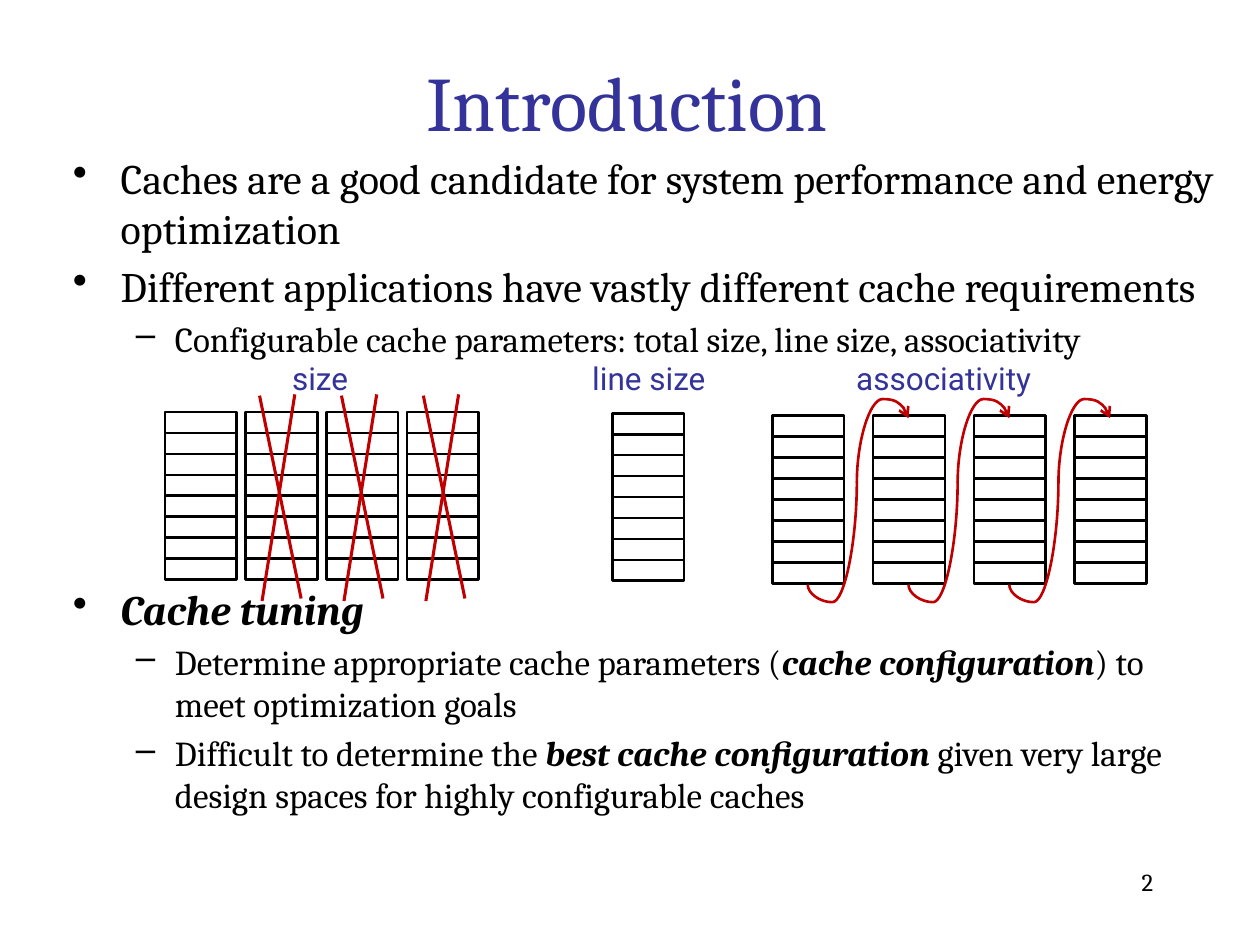
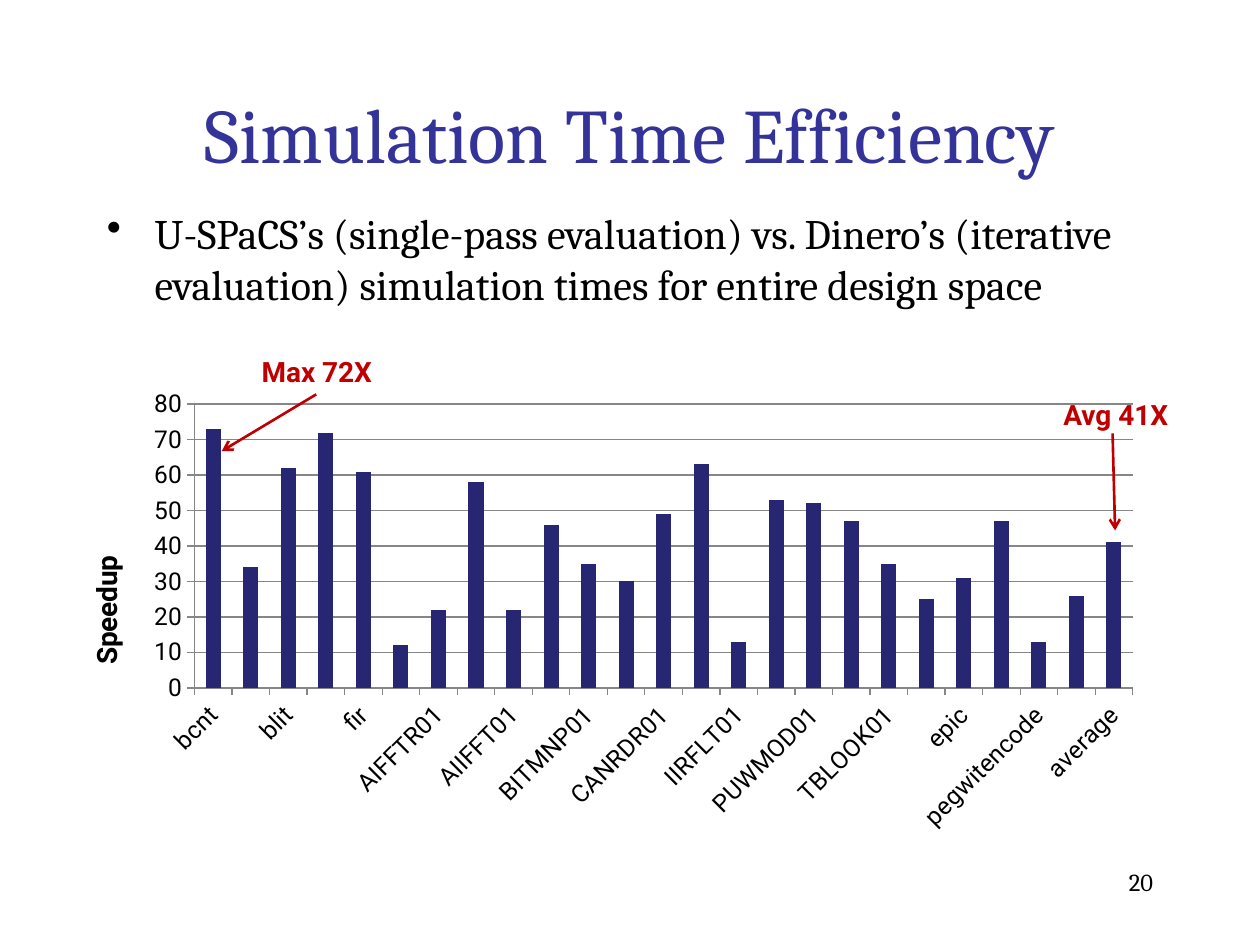
import pptx
import pptx.chart.data
import pptx.dml.color
import pptx.enum.chart
import pptx.enum.shapes
import pptx.enum.text
import pptx.oxml
import pptx.oxml.ns
import pptx.util

Inches, Pt = pptx.util.Inches, pptx.util.Pt
qn = pptx.oxml.ns.qn
ALIGN = pptx.enum.text.PP_ALIGN
ANCHOR = pptx.enum.text.MSO_ANCHOR
CONNECTOR = pptx.enum.shapes.MSO_CONNECTOR

SERIF, SANS = "Cambria", "Roboto"
INK, NAVY, RED, BAR, GRID = "000000", "333399", "C00000", "262673", "868686"

LEVELS = [
    {"bullet": "•", "left": 0.38, "hang": 0.38, "size": 24},
    {"bullet": "–", "left": 0.81, "hang": 0.31, "size": 20},
]

INTRO = {
    "title": "Introduction", "title_at": (0.73, 0.17, 8.5, 1.25), "number": "2",
    "bodies": [
        ((0.48, 1.16, 9.31, 1.8), [
            (0, [("Caches are a good candidate for system performance and energy optimization", False)]),
            (0, [("Different applications have vastly different cache requirements", False)]),
            (1, [("Configurable cache parameters: total size, line size, associativity", False)]),
        ]),
        ((0.48, 4.58, 9.31, 2.0), [
            (0, [("Cache tuning", True)]),
            (1, [("Determine appropriate cache parameters (", False),
                 ("cache configuration", True),
                 (") to meet optimization goals", False)]),
            (1, [("Difficult to determine the ", False),
                 ("best cache configuration ", True),
                 ("given very large design spaces for highly configurable caches", False)]),
        ]),
    ],
}
CACHE_SETS = [
    {"label": "size", "label_left": 1.42, "left": 1.31, "top": 3.27, "step": 0.64, "count": 4},
    {"label": "line size", "label_left": 4.03, "left": 4.86, "top": 3.28, "step": 0, "count": 1},
    {"label": "associativity", "label_left": 6.37, "left": 6.13, "top": 3.3, "step": 0.8, "count": 4},
]
CACHE_WIDTH, CACHE_HEIGHT, CACHE_LINES = 0.57, 1.33, 8
CROSS_LEFT, CROSS_TOP, CROSS_STEP = 2.06, 3.13, 0.65

EFFICIENCY = {
    "title": "Simulation Time Efficiency", "title_at": (0.75, 0.43, 8.5, 1.25), "number": "20",
    "bodies": [
        ((0.75, 1.6, 8.5, 0.94), [
            (0, [("U-SPaCS’s (single-pass evaluation) vs. Dinero’s (iterative evaluation) "
                  "simulation times for entire design space", False)]),
        ]),
    ],
}
SPEEDUPS = {
    "bcnt": 73, "bilv": 34, "blit": 62, "brev": 72, "fir": 61, "A2TIME01": 12,
    "AIFFTR01": 22, "AIFIRF01": 58, "AIIFFT01": 22, "BaseFP01": 46, "BITMNP01": 35,
    "CACHEB01": 30, "CANRDR01": 49, "IDCTRN01": 63, "IIRFLT01": 13, "PNTRCH01": 53,
    "PUWMOD01": 52, "RSPEED01": 47, "TBLOOK01": 35, "TTSPRK01": 25, "epic": 31,
    "mpeg2decode": 47, "pegwitencode": 13, "jpegencode": 26, "average": 41,
}
PLOT_AREA = {"x": 0.121, "y": 0.095, "w": 0.855, "h": 0.566}
CALLOUTS = [
    ("Max 72X", (1.8, 2.76, 1.43, 0.37), (2.51, 3.13), (1.76, 3.58)),
    ("Avg 41X", (8.2, 3.1, 1.31, 0.37), (8.83, 3.44), (8.85, 4.21)),
]


def color(hex_code):
    return pptx.dml.color.RGBColor.from_string(hex_code)


def xml(tag, **attributes):
    element = pptx.oxml.parse_xml(f'<{tag} {pptx.oxml.ns.nsdecls(tag.split(":")[0])}/>')
    for name, value in attributes.items():
        element.set(name, str(value))
    return element


def style(font, size, ink, face, bold=False, italic=False):
    font.size, font.name, font.bold, font.italic = Pt(size), face, bold, italic
    font.color.rgb = color(ink)


def text_box(slide, at, anchor=ANCHOR.TOP):
    frame = slide.shapes.add_textbox(*map(Inches, at)).text_frame
    frame.word_wrap = True
    frame.vertical_anchor = anchor
    return frame


def add_text(slide, at, text, size, ink, face, align=ALIGN.CENTER, anchor=ANCHOR.TOP, bold=False):
    frame = text_box(slide, at, anchor)
    frame.text = text
    paragraph = frame.paragraphs[0]
    paragraph.alignment = align
    style(paragraph.runs[0].font, size, ink, face, bold)


def add_body(slide, at, items):
    frame = text_box(slide, at)
    for index, (depth, pieces) in enumerate(items):
        level = LEVELS[depth]
        paragraph = frame.paragraphs[0] if index == 0 else frame.add_paragraph()
        properties = paragraph._p.get_or_add_pPr()
        properties.set("marL", str(Inches(level["left"])))
        properties.set("indent", str(-Inches(level["hang"])))
        properties.append(xml("a:buChar", char=level["bullet"]))
        if index:
            paragraph.space_before = Pt(4)
        for text, emphasis in pieces:
            run = paragraph.add_run()
            run.text = text
            style(run.font, level["size"], INK, SERIF, emphasis, emphasis)


def add_line(slide, start, end, ink, width, arrow=False, kind=CONNECTOR.STRAIGHT):
    line = slide.shapes.add_connector(kind, *map(Inches, (*start, *end)))
    line.line.color.rgb = color(ink)
    line.line.width = Pt(width)
    properties = line.element.spPr
    if arrow:
        properties.find(qn("a:ln")).append(xml("a:tailEnd", type="arrow"))
    properties.append(xml("a:effectLst"))
    return line


def add_curve(slide, start, end, bend, arrow=False):
    middle_x, middle_y = (start[0] + end[0]) / 2, (start[1] + end[1]) / 2
    half_width, half_height = (start[1] - end[1]) / 2, (end[0] - start[0]) / 2
    curve = add_line(slide, (middle_x + half_width, middle_y + half_height),
                     (middle_x - half_width, middle_y - half_height),
                     RED, 1.5, arrow, CONNECTOR.CURVE)
    properties = curve.element.spPr
    properties.find(qn("a:xfrm")).set("rot", "5400000")
    geometry = properties.find(qn("a:prstGeom"))
    geometry.set("prst", "curvedConnector3")
    geometry.find(qn("a:avLst")).append(
        xml("a:gd", name="adj1", fmla=f"val {round(bend * 100000)}"))


def add_cache(slide, left, top):
    cache = slide.shapes.add_shape(pptx.enum.shapes.MSO_SHAPE.RECTANGLE,
                                   *map(Inches, (left, top, CACHE_WIDTH, CACHE_HEIGHT)))
    cache.shadow.inherit = False
    cache.fill.background()
    cache.line.color.rgb = color(INK)
    cache.line.width = Pt(1.5)
    for row in range(1, CACHE_LINES):
        y = top + row * CACHE_HEIGHT / CACHE_LINES
        add_line(slide, (left, y), (left + CACHE_WIDTH, y), INK, 1.5)


def add_slide(deck, content):
    slide = deck.slides.add_slide(deck.slide_layouts[6])
    for at, items in content["bodies"]:
        add_body(slide, at, items)
    add_text(slide, content["title_at"], content["title"], 44, NAVY, SERIF, anchor=ANCHOR.MIDDLE)
    add_text(slide, (7.17, 6.83, 2.08, 0.5), content["number"], 14, INK, SERIF, ALIGN.RIGHT)
    return slide


def add_cache_diagram(slide):
    for group in CACHE_SETS:
        add_text(slide, (group["label_left"], 2.8, 2.24, 0.71), group["label"], 18, NAVY, SANS)
        for index in range(group["count"]):
            add_cache(slide, group["left"] + index * group["step"], group["top"])
    for index in range(3):
        x = CROSS_LEFT + index * CROSS_STEP
        add_line(slide, (x + 0.28, CROSS_TOP), (x + 0.02, CROSS_TOP + 1.64), RED, 1.75)
        add_line(slide, (x, CROSS_TOP + 0.01), (x + 0.33, CROSS_TOP + 1.62), RED, 1.75)
    ways = CACHE_SETS[-1]
    for index in range(ways["count"] - 1):
        x = ways["left"] + index * ways["step"]
        add_curve(slide, (x + 0.67, 3.83), (x + 1.08, 3.32), 1.3, arrow=True)
        add_curve(slide, (x + 0.28, 4.64), (x + 0.67, 3.82), -0.17)


def add_speedup_chart(slide):
    data = pptx.chart.data.CategoryChartData()
    data.categories = list(SPEEDUPS)
    data.add_series("Series 1", list(SPEEDUPS.values()))
    chart = slide.shapes.add_chart(pptx.enum.chart.XL_CHART_TYPE.COLUMN_CLUSTERED,
                                   *map(Inches, (0.49, 2.83, 8.71, 3.98)), data).chart
    chart.has_legend = chart.has_title = False
    style(chart.font, 18, INK, SERIF)

    bars = chart.plots[0]
    bars.gap_width = 150
    bars.vary_by_categories = False
    fill = bars.series[0].format.fill
    fill.solid()
    fill.fore_color.rgb = color(BAR)

    benchmarks, speedup = chart.category_axis, chart.value_axis
    for axis in (benchmarks, speedup):
        style(axis.tick_labels.font, 14, INK, SANS)
        axis.major_tick_mark = pptx.enum.chart.XL_TICK_MARK.OUTSIDE
        axis.format.line.color.rgb = color(GRID)
    benchmarks._element.find(qn("c:txPr")).find(qn("a:bodyPr")).set("rot", "-2700000")
    speedup.minimum_scale, speedup.maximum_scale, speedup.major_unit = 0, 80, 10
    speedup.has_major_gridlines = True
    speedup.major_gridlines.format.line.color.rgb = color(GRID)
    heading = speedup.axis_title.text_frame
    heading.text = "Speedup"
    style(heading.paragraphs[0].runs[0].font, 16, INK, SANS, bold=True)

    plot_area = chart._chartSpace.chart.plotArea
    for previous in plot_area.findall(qn("c:layout")):
        plot_area.remove(previous)
    layout, manual = xml("c:layout"), xml("c:manualLayout")
    manual.append(xml("c:layoutTarget", val="inner"))
    for side in "xy":
        manual.append(xml(f"c:{side}Mode", val="edge"))
    for side, share in PLOT_AREA.items():
        manual.append(xml(f"c:{side}", val=share))
    layout.append(manual)
    plot_area.insert(0, layout)


def main():
    deck = pptx.Presentation()
    deck.slide_width, deck.slide_height = Inches(10), Inches(7.5)
    add_cache_diagram(add_slide(deck, INTRO))
    efficiency = add_slide(deck, EFFICIENCY)
    add_speedup_chart(efficiency)
    for text, at, start, end in CALLOUTS:
        add_text(efficiency, at, text, 16, RED, SANS, anchor=ANCHOR.MIDDLE, bold=True)
        add_line(efficiency, start, end, RED, 1.5, arrow=True)
    deck.save("out.pptx")


if __name__ == "__main__":
    main()
